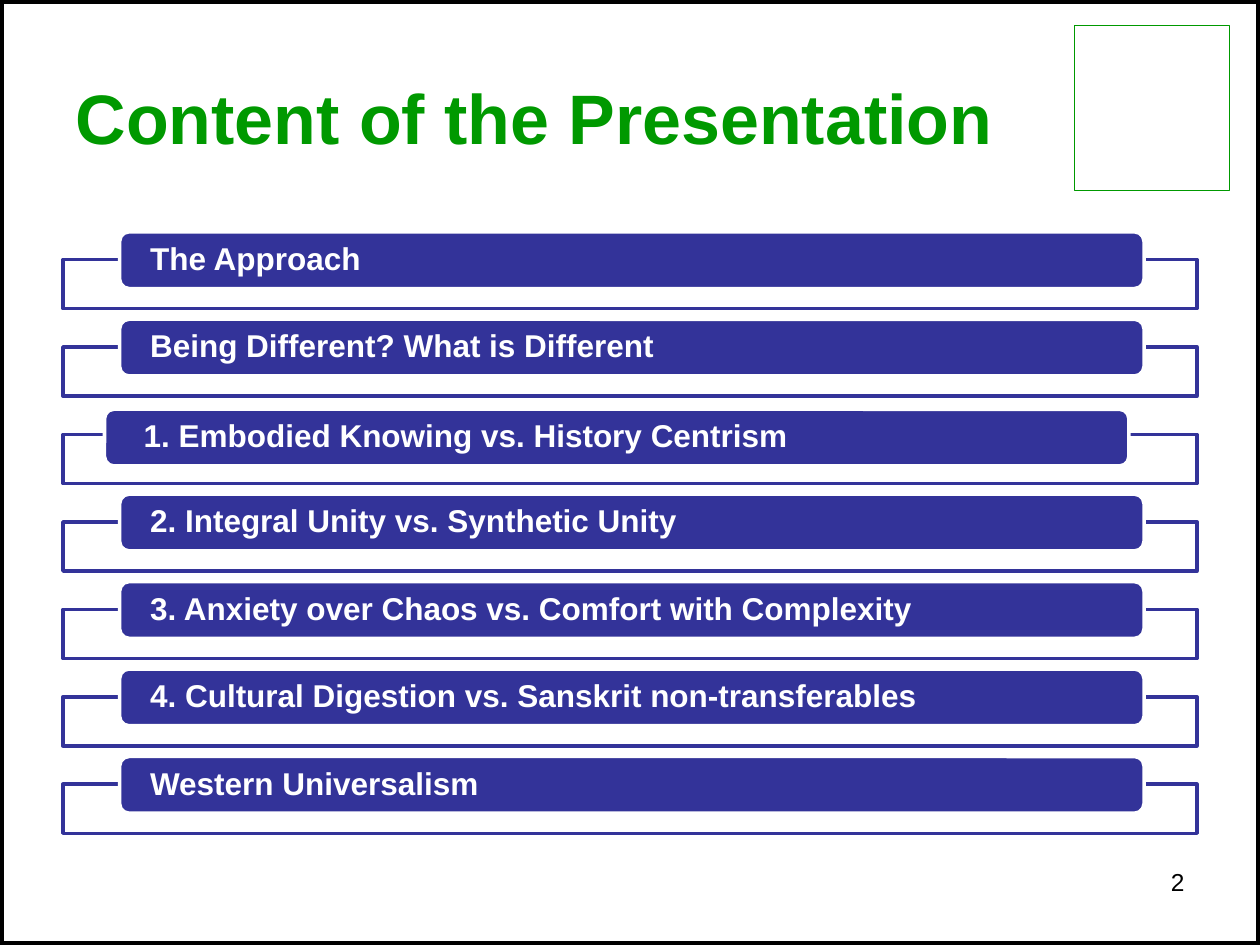
from pptx import Presentation
from pptx.dml.color import RGBColor
from pptx.enum.shapes import MSO_SHAPE
from pptx.enum.text import MSO_ANCHOR, PP_ALIGN
from pptx.oxml.ns import qn
from pptx.util import Inches, Pt
from lxml.etree import SubElement

COLORS = {"green": "009900", "indigo": "333399", "white": "FFFFFF", "black": "000000"}
TOPICS = [
    "The Approach",
    "Being Different? What is Different",
    " 1. Embodied Knowing vs. History Centrism",
    "2. Integral Unity vs. Synthetic Unity",
    "3. Anxiety over Chaos vs. Comfort with Complexity",
    "4. Cultural Digestion vs. Sanskrit non-transferables",
    "Western Universalism",
]
SHIFTED_TOPIC = 2
FIRST_ROW, ROW_PITCH = 18.4, 6.94


class AgendaSlide:
    """Draws styled elements on a slide divided into 100 columns and 75 rows."""

    font_name = "Arial"

    def __init__(self, deck):
        self.column = deck.slide_width / 100
        self.row = deck.slide_height / 75
        self.slide = deck.slides.add_slide(deck.slide_layouts[5])

    def area(self, left, top, width, height):
        return (round(left * self.column), round(top * self.row),
                round(width * self.column), round(height * self.row))

    def color(self, name):
        return RGBColor.from_string(COLORS[name])

    def set_text(self, frame, text, size, color, bold=False, align=PP_ALIGN.LEFT):
        frame.word_wrap = True
        frame.text = text
        paragraph = frame.paragraphs[0]
        paragraph.alignment = align
        paragraph.font.name = self.font_name
        paragraph.font.size = Pt(size)
        paragraph.font.bold = bold
        paragraph.font.color.rgb = self.color(color)
        return paragraph

    def box(self, area, line, weight, fill=None, opacity=100, kind=MSO_SHAPE.RECTANGLE):
        box = self.slide.shapes.add_shape(kind, *self.area(*area))
        box.shadow.inherit = False
        box.line.color.rgb = self.color(line)
        box.line.width = Pt(weight)
        if fill is None:
            box.fill.background()
            return box
        box.fill.solid()
        box.fill.fore_color.rgb = self.color(fill)
        if opacity < 100:
            tint = box.element.spPr.find(f"{qn('a:solidFill')}/{qn('a:srgbClr')}")
            SubElement(tint, qn("a:alpha"), val=str(opacity * 1000))
        return box

    def title(self, text, area):
        heading = self.slide.shapes.title
        heading.left, heading.top, heading.width, heading.height = self.area(*area)
        heading.text_frame.vertical_anchor = MSO_ANCHOR.MIDDLE
        self.set_text(heading.text_frame, text, 40, "green", bold=True)

    def topic(self, text, top, left=9.5, drop=0):
        self.box((5, top + 2.2, 90, 3.9), "indigo", 2, "white", opacity=90)
        bar = self.box((left, top + drop, 81.3, 4.5), "white", 2, "indigo",
                       kind=MSO_SHAPE.ROUNDED_RECTANGLE)
        frame = bar.text_frame
        frame.vertical_anchor = MSO_ANCHOR.MIDDLE
        frame.margin_left = frame.margin_right = Inches(0.22)
        frame.margin_top = frame.margin_bottom = 0
        self.set_text(frame, text, 18, "white", bold=True).line_spacing = 0.9

    def page_number(self, number, area):
        label = self.slide.shapes.add_textbox(*self.area(*area))
        self.set_text(label.text_frame, str(number), 14, "black", align=PP_ALIGN.RIGHT)


def main():
    deck = Presentation()
    deck.slide_width, deck.slide_height = Inches(10), Inches(7.5)
    agenda = AgendaSlide(deck)
    agenda.box((0, 0, 100, 75), "black", 4.5)
    agenda.box((85.3, 2, 12.3, 13.1), "green", 0.75)
    agenda.title("Content of the Presentation", (5, 3, 75, 12.5))
    for index, text in enumerate(TOPICS):
        shift = {"left": 8.3, "drop": 0.2} if index == SHIFTED_TOPIC else {}
        agenda.topic(text, FIRST_ROW + index * ROW_PITCH, **shift)
    agenda.page_number(2, (71.7, 68.3, 23.3, 5.2))
    deck.save("out.pptx")


if __name__ == "__main__":
    main()
